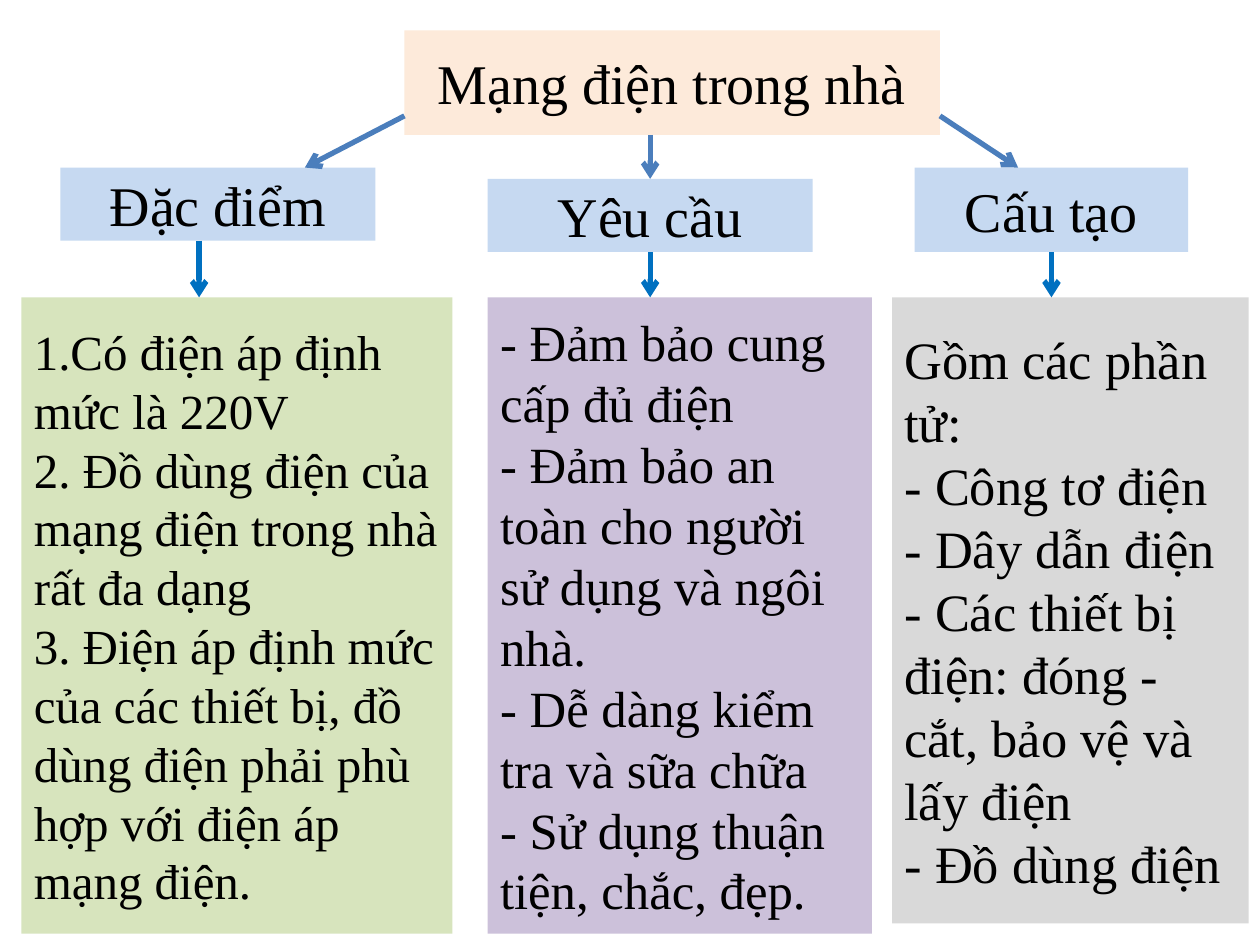
import pptx
import pptx.util
import pptx.dml.color
import pptx.enum.shapes
import pptx.enum.text
import pptx.oxml.ns
from lxml import etree

Inches = pptx.util.Inches
RGBColor = pptx.dml.color.RGBColor
ALIGN = pptx.enum.text.PP_ALIGN

FONT = "Times New Roman"
BLACK = RGBColor(0x00, 0x00, 0x00)
PEACH = RGBColor(0xFD, 0xEA, 0xDA)
PALE_BLUE = RGBColor(0xC6, 0xD9, 0xF1)
GREEN = RGBColor(0xD7, 0xE4, 0xBD)
PURPLE = RGBColor(0xCC, 0xC1, 0xDA)
GRAY = RGBColor(0xD9, 0xD9, 0xD9)
BRANCH_BLUE = RGBColor(0x4B, 0x7E, 0xBC)
DETAIL_BLUE = RGBColor(0x00, 0x70, 0xC0)

TITLE = "Mạng điện trong nhà"
TITLE_BOX = (3.21, 0.24, 4.25, 0.83)
DETAIL_TOP = 2.36

# head and detail boxes: left, top, width, height; detail: left, width, height
# branch: start and end of the arrow from the title; stem: x of the arrow to the detail
BRANCHES = [
    dict(head="Đặc điểm", head_box=(0.48, 1.33, 2.5, 0.58),
         detail=(0.17, 3.42, 5.05), fill=GREEN, size=28,
         branch=((3.21, 0.92), (2.42, 1.33)), stem=1.58,
         lines=["1.Có điện áp định mức là 220V",
                "2. Đồ dùng điện của mạng điện trong nhà rất đa dạng",
                "3. Điện áp định mức của các thiết bị, đồ dùng điện phải phù hợp "
                "với điện áp mạng điện."]),
    dict(head="Yêu cầu", head_box=(3.87, 1.42, 2.58, 0.58),
         detail=(3.87, 3.05, 5.05), fill=PURPLE, size=29,
         branch=((5.16, 1.07), (5.16, 1.42)), stem=5.16,
         lines=["- Đảm bảo cung cấp đủ điện",
                "- Đảm bảo an toàn cho người sử dụng và ngôi nhà.",
                "- Dễ dàng kiểm tra và sữa chữa",
                "- Sử dụng thuận tiện, chắc, đẹp."]),
    dict(head="Cấu tạo", head_box=(7.26, 1.33, 2.17, 0.67),
         detail=(7.08, 2.83, 4.97), fill=GRAY, size=30,
         branch=((7.46, 0.92), (8.08, 1.33)), stem=8.345,
         lines=["Gồm các phần tử:",
                "- Công tơ điện",
                "- Dây dẫn điện",
                "- Các thiết bị điện: đóng - cắt, bảo vệ và lấy điện",
                "- Đồ dùng điện"]),
]


def write(sp, lines, size=32, align=ALIGN.CENTER):
    tf = sp.text_frame
    tf.word_wrap = True
    tf.auto_size = pptx.enum.text.MSO_AUTO_SIZE.NONE
    tf.vertical_anchor = pptx.enum.text.MSO_ANCHOR.MIDDLE
    for i, line in enumerate(lines):
        p = tf.add_paragraph() if i else tf.paragraphs[0]
        p.alignment = align
        r = p.add_run()
        r.text = line
        r.font.name, r.font.size = FONT, pptx.util.Pt(size)
        r.font.color.rgb = BLACK


def paint(sp, color):
    sp.fill.solid()
    sp.fill.fore_color.rgb = color
    sp.line.fill.background()


def add_box(slide, box, color, lines, **text_format):
    sp = slide.shapes.add_shape(pptx.enum.shapes.MSO_SHAPE.RECTANGLE,
                                *(Inches(v) for v in box))
    sp.shadow.inherit = False
    paint(sp, color)
    write(sp, lines, **text_format)
    return sp


def add_arrow(slide, start, end, color):
    c = slide.shapes.add_connector(pptx.enum.shapes.MSO_CONNECTOR.STRAIGHT,
                                   *(Inches(v) for v in start + end))
    c.line.color.rgb = color
    c.line.width = pptx.util.Pt(3)
    qn = pptx.oxml.ns.qn
    etree.SubElement(c.line._get_or_add_ln(), qn("a:tailEnd"), type="arrow")
    etree.SubElement(c._element.spPr, qn("a:effectLst"))
    return c


def joins(box, x):
    """True when x is the middle of the box's top and bottom sides."""
    return abs(box[0] + box[2] / 2 - x) < 0.01


def main():
    prs = pptx.Presentation()
    prs.slide_width, prs.slide_height = Inches(10), Inches(7.5)
    slide = prs.slides.add_slide(prs.slide_layouts[5])

    title = slide.shapes.title
    title.left, title.top, title.width, title.height = (Inches(v) for v in TITLE_BOX)
    paint(title, PEACH)
    write(title, [TITLE])

    for b in BRANCHES:
        left, width, height = b["detail"]
        head = add_box(slide, b["head_box"], PALE_BLUE, [b["head"]])
        add_box(slide, (left, DETAIL_TOP, width, height), b["fill"], b["lines"],
                size=b["size"], align=ALIGN.LEFT)

        start, end = b["branch"]
        branch = add_arrow(slide, start, end, BRANCH_BLUE)
        if joins(b["head_box"], end[0]):
            branch.end_connect(head, 0)

        head_bottom = b["head_box"][1] + b["head_box"][3]
        stem = add_arrow(slide, (b["stem"], head_bottom), (b["stem"], DETAIL_TOP),
                         DETAIL_BLUE)
        if joins(b["head_box"], b["stem"]):
            stem.begin_connect(head, 2)

    prs.save("out.pptx")


if __name__ == "__main__":
    main()
